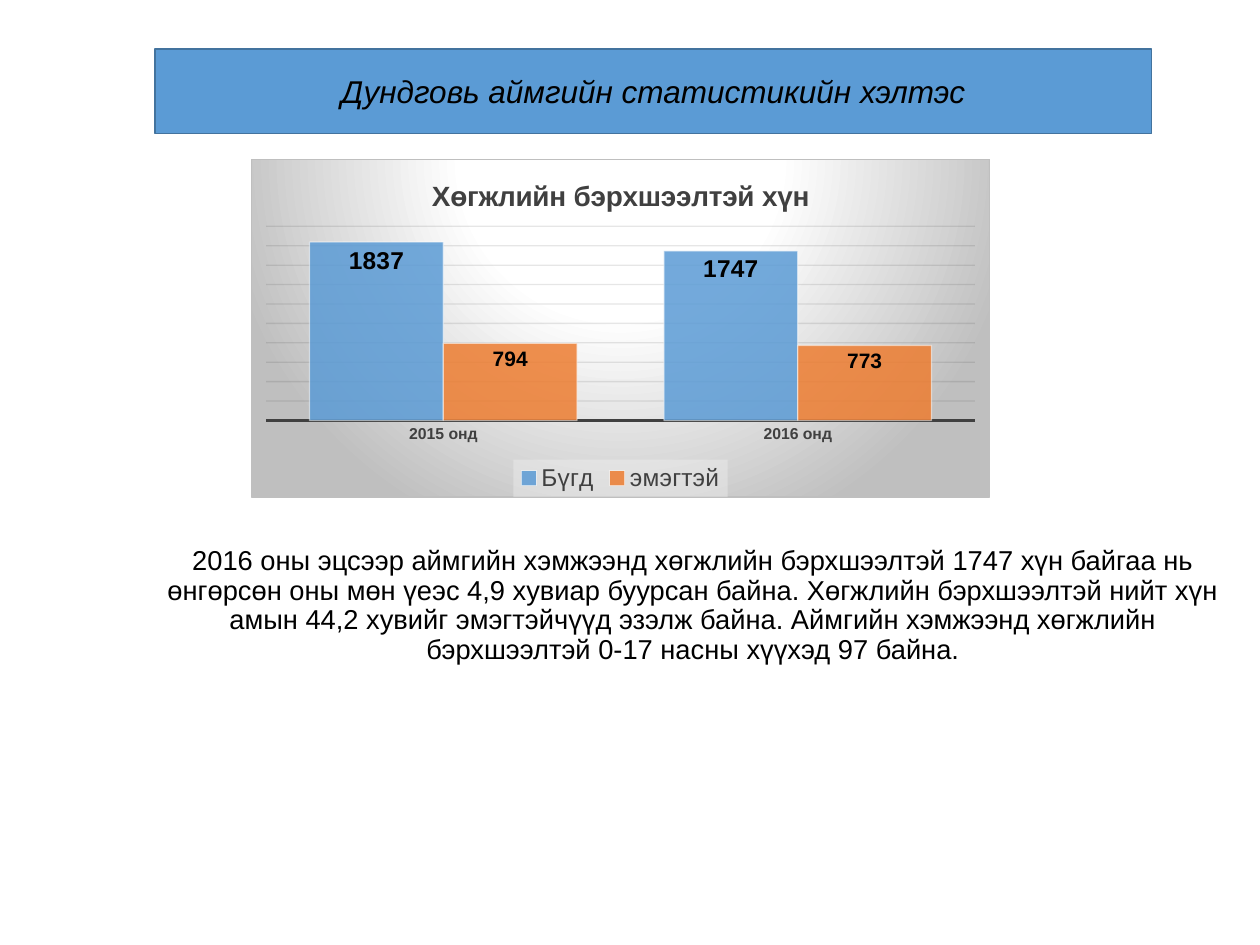
from pptx import Presentation
from pptx.chart.data import CategoryChartData
from pptx.dml.color import RGBColor
from pptx.enum.chart import XL_CHART_TYPE, XL_LABEL_POSITION, XL_LEGEND_POSITION, XL_TICK_MARK
from pptx.enum.text import MSO_ANCHOR, MSO_AUTO_SIZE, PP_ALIGN
from pptx.oxml import parse_xml
from pptx.oxml.ns import nsdecls, qn
from pptx.util import Inches, Pt

COLUMN = XL_CHART_TYPE.COLUMN_CLUSTERED
INSIDE_END = XL_LABEL_POSITION.INSIDE_END
BOTTOM_LEGEND = XL_LEGEND_POSITION.BOTTOM
NO_TICK = XL_TICK_MARK.NONE
CENTER = PP_ALIGN.CENTER

BANNER = "Дундговь аймгийн статистикийн хэлтэс"
SUMMARY = (
    "2016 оны эцсээр аймгийн хэмжээнд хөгжлийн бэрхшээлтэй 1747 хүн байгаа нь "
    "өнгөрсөн оны мөн үеэс 4,9 хувиар буурсан байна. Хөгжлийн бэрхшээлтэй нийт хүн "
    "амын 44,2 хувийг эмэгтэйчүүд эзэлж байна. Аймгийн хэмжээнд хөгжлийн "
    "бэрхшээлтэй 0-17 насны хүүхэд 97 байна."
)
CHART_TITLE = "Хөгжлийн бэрхшээлтэй хүн"
YEARS = ["2015 онд", "2016 онд"]
SERIES = [  # name, values, colour, label size
    ("Бүгд", (1837, 1747), "blue", 14),
    ("эмэгтэй", (794, 773), "orange", 12),
]
COLORS = {
    "blue": "5B9BD5", "orange": "ED7D31", "banner line": "43739E", "text": "000000",
    "chart text": "404040", "grid": "0D0D0D", "white": "FFFFFF", "edge": "BFBFBF",
    "legend": "F2F2F2",
}
BANNER_BOX = (1.23, 0.39, 7.91, 0.67)
CHART_BOX = (1.99, 1.26, 5.87, 2.69)
SUMMARY_BOX = (1.19, 4.26, 8.62, 1.07)


def rgb(name):
    return RGBColor.from_string(COLORS[name])


def style_font(font, size, color="text", bold=False, italic=False, face="Arial"):
    font.name, font.size = face, Pt(size)
    font.bold, font.italic = bold, italic
    font.color.rgb = rgb(color)


def style_line(line, color, width):
    line.color.rgb = rgb(color)
    line.width = Pt(width)


def set_opacity(element, percent):
    for color in element.iter(qn("a:srgbClr")):
        color.append(parse_xml(f'<a:alpha {nsdecls("a")} val="{percent * 1000}"/>'))


def fill_placeholder(shape, box, text, size, anchor, italic=False):
    shape.left, shape.top, shape.width, shape.height = map(Inches, box)
    frame = shape.text_frame
    frame.text = text
    frame.word_wrap = True
    frame.auto_size = MSO_AUTO_SIZE.NONE
    frame.vertical_anchor = anchor
    paragraph = frame.paragraphs[0]
    properties = paragraph._p.get_or_add_pPr()
    properties.set("marL", "0")
    properties.set("indent", "0")
    properties.append(parse_xml(f'<a:buNone {nsdecls("a")}/>'))
    paragraph.alignment = CENTER
    paragraph.space_before = Pt(0)
    style_font(paragraph.runs[0].font, size, italic=italic)
    return paragraph


def add_chart_backgrounds(chart):
    stops = "".join(
        f'<a:gs pos="{share * 1000}"><a:srgbClr val="{COLORS[color]}"/></a:gs>'
        for share, color in [(0, "white"), (39, "white"), (100, "edge")]
    )
    chart._chartSpace.find(qn("c:chart")).addnext(parse_xml(
        f'<c:spPr {nsdecls("c", "a")}><a:gradFill><a:gsLst>{stops}</a:gsLst>'
        '<a:path path="circle"><a:fillToRect l="50000" t="-80000" r="50000" b="180000"/>'
        f'</a:path></a:gradFill><a:ln w="{Pt(0.75)}"><a:solidFill>'
        f'<a:srgbClr val="{COLORS["edge"]}"/></a:solidFill></a:ln></c:spPr>'
    ))
    legend_fill = parse_xml(
        f'<c:spPr {nsdecls("c", "a")}><a:solidFill>'
        f'<a:srgbClr val="{COLORS["legend"]}"/></a:solidFill></c:spPr>'
    )
    set_opacity(legend_fill, 39)
    chart.legend._element.find(qn("c:txPr")).addprevious(legend_fill)


def add_disability_chart(slide):
    data = CategoryChartData()
    data.categories = YEARS
    for name, values, *_ in SERIES:
        data.add_series(name, values)
    chart = slide.shapes.add_chart(COLUMN, *map(Inches, CHART_BOX), data).chart
    style_font(chart.font, 10, face="Calibri")

    chart.has_title = True
    chart.chart_title.text_frame.text = CHART_TITLE
    chart.chart_title.include_in_layout = False
    title_run = chart.chart_title.text_frame.paragraphs[0].runs[0]
    style_font(title_run.font, 16, "chart text", bold=True)

    chart.has_legend = True
    chart.legend.position = BOTTOM_LEGEND
    chart.legend.include_in_layout = False
    style_font(chart.legend.font, 14, "chart text")

    category_axis, value_axis = chart.category_axis, chart.value_axis
    category_axis.major_tick_mark = NO_TICK
    style_font(category_axis.tick_labels.font, 9, "chart text", bold=True)
    style_line(category_axis.format.line, "chart text", 1.5)
    value_axis.minimum_scale, value_axis.maximum_scale, value_axis.major_unit = 0, 2000, 200
    value_axis.visible = False
    gridlines = value_axis.major_gridlines
    style_line(gridlines.format.line, "grid", 0.75)
    set_opacity(value_axis._element.find(qn("c:majorGridlines")), 10)

    plot = chart.plots[0]
    plot.gap_width, plot.overlap = 65, 0
    plot.vary_by_categories = False
    for series, (_, _, color, label_size) in zip(plot.series, SERIES):
        series.format.fill.solid()
        series.format.fill.fore_color.rgb = rgb(color)
        style_line(series.format.line, "white", 0.75)
        shape_properties = series._element.find(qn("c:spPr"))
        set_opacity(shape_properties.find(qn("a:solidFill")), 85)
        set_opacity(shape_properties.find(qn("a:ln")), 50)
        labels = series.data_labels
        labels.show_value = True
        labels.position = INSIDE_END
        style_font(labels.font, label_size, bold=True)
    add_chart_backgrounds(chart)


def main():
    presentation = Presentation()
    presentation.slide_width, presentation.slide_height = Inches(10), Inches(7.5)
    slide = presentation.slides.add_slide(presentation.slide_layouts[1])
    banner, summary = slide.placeholders
    fill_placeholder(banner, BANNER_BOX, BANNER, 18, MSO_ANCHOR.MIDDLE, italic=True)
    banner.fill.solid()
    banner.fill.fore_color.rgb = rgb("blue")
    style_line(banner.line, "banner line", 1)
    paragraph = fill_placeholder(summary, SUMMARY_BOX, SUMMARY, 15.6, MSO_ANCHOR.BOTTOM)
    paragraph.line_spacing = 0.9
    add_disability_chart(slide)
    presentation.save("out.pptx")


if __name__ == "__main__":
    main()
